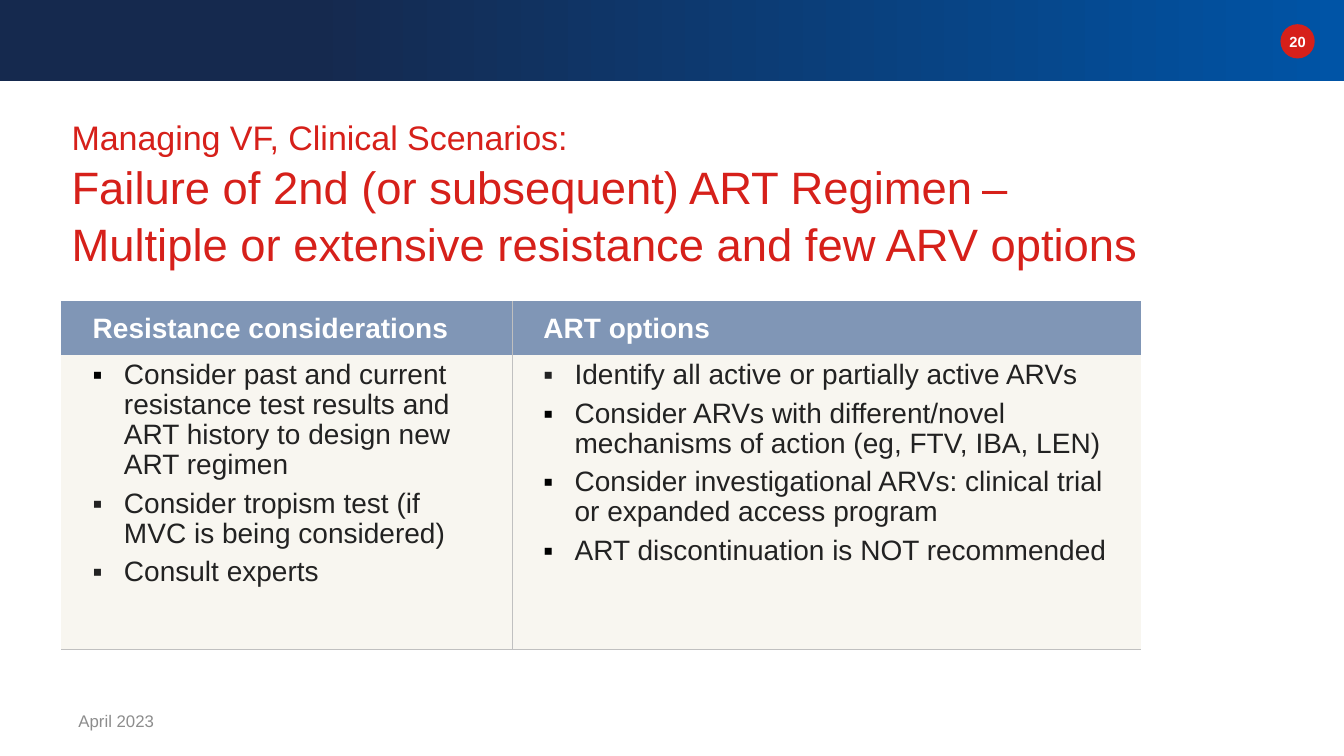
"""Build the slide on managing failure of a second or later ART regimen."""
from dataclasses import dataclass

import lxml.etree
import pptx
import pptx.dml.color
import pptx.enum.shapes
import pptx.enum.text
import pptx.oxml.ns
import pptx.util

Inches = pptx.util.Inches
Pt = pptx.util.Pt
qn = pptx.oxml.ns.qn

FONT = "Arial"
COLORS = {
    "navy": "15294E", "blue": "0054A6", "red": "D6201A", "white": "FFFFFF",
    "header": "8096B6", "body": "F8F6F0", "text": "222222", "black": "000000",
    "header_line": "BFBFBF", "body_line": "C0C0C0", "gray": "8D8D8D",
}
NO_TABLE_STYLE = "{2D5ABB26-0587-4C30-8999-92F81FD0307C}"


@dataclass(frozen=True)
class Bullet:
    """One list entry and the colour of its mark."""
    text: str
    mark: str = "text"


@dataclass(frozen=True)
class Column:
    """One table column with its heading and list."""
    heading: str
    width: float
    inner_side: str
    bullets: tuple[Bullet, ...]


@dataclass(frozen=True)
class TitleRun:
    """A stretch of the title at one size."""
    text: str
    size: float
    breaks: bool = False


@dataclass(frozen=True)
class Label:
    """A single line of text in its own box."""
    text: str
    box: tuple[float, float, float, float]
    size: float
    color: str
    bold: bool = False
    centered: bool = False


TITLE = (
    TitleRun("Managing VF, Clinical Scenarios:", 24.3, True),
    TitleRun("Failure of 2nd (or subsequent) ART Regimen", 32.4),
    TitleRun(" ", 24.3),
    TitleRun("–", 32.4, True),
    TitleRun("Multiple or extensive resistance and few ARV options", 32.4),
)
COLUMNS = (
    Column("Resistance considerations", 4.47, "R", (
        Bullet("Consider past and current resistance test results and "
               "ART history to design new ART regimen", "black"),
        Bullet("Consider tropism test (if MVC is being considered)"),
        Bullet("Consult experts"),
    )),
    Column("ART options", 6.24, "L", (
        Bullet("Identify all active or partially active ARVs"),
        Bullet("Consider ARVs with different/novel mechanisms of action "
               "(eg, FTV, IBA, LEN)", "black"),
        Bullet("Consider investigational ARVs: clinical trial or expanded "
               "access program", "black"),
        Bullet("ART discontinuation is NOT recommended", "black"),
    )),
)
ROW_HEIGHTS = (0.53, 2.92)
LABELS = (
    Label("20", (12.65, 0.27, 0.44, 0.28), 10.5, "white", True, True),
    Label("April 2023", (0.68, 6.95, 3, 0.4), 12, "gray"),
)


def rgb(name: str) -> pptx.dml.color.RGBColor:
    """Look up a named colour."""
    return pptx.dml.color.RGBColor.from_string(COLORS[name])


def set_font(paragraph, size: float, color: str, bold: bool = False) -> None:
    """Format all the text of a paragraph."""
    font = paragraph.font
    font.name, font.size, font.bold = FONT, Pt(size), bold
    font.color.rgb = rgb(color)


def add_plain_shape(slide, kind, left: float, top: float, width: float, height: float):
    """Add a shape without outline or shadow."""
    shape = slide.shapes.add_shape(
        kind, Inches(left), Inches(top), Inches(width), Inches(height))
    shape.shadow.inherit = False
    shape.line.fill.background()
    return shape


def add_banner(slide) -> None:
    """Draw the gradient banner and the page number disc."""
    kinds = pptx.enum.shapes.MSO_SHAPE
    banner = add_plain_shape(slide, kinds.RECTANGLE, 0, 0, 13.33, 0.8)
    banner.fill.gradient()
    banner.fill.gradient_angle = 0
    stops = ((0.23, "navy"), (1, "blue"))
    for stop, (position, color) in zip(banner.fill.gradient_stops, stops):
        stop.position = position
        stop.color.rgb = rgb(color)
    disc = add_plain_shape(slide, kinds.OVAL, 12.7, 0.24, 0.34, 0.34)
    disc.fill.solid()
    disc.fill.fore_color.rgb = rgb("red")


def add_label(slide, label: Label) -> None:
    """Add one line of text."""
    shape = slide.shapes.add_textbox(*map(Inches, label.box))
    frame = shape.text_frame
    frame.word_wrap = True
    frame.vertical_anchor = pptx.enum.text.MSO_ANCHOR.MIDDLE
    paragraph = frame.paragraphs[0]
    paragraph.text = label.text
    if label.centered:
        paragraph.alignment = pptx.enum.text.PP_ALIGN.CENTER
    set_font(paragraph, label.size, label.color, label.bold)


def fill_title(title) -> None:
    """Place the title and write its lines."""
    title.left, title.top = Inches(0.61), Inches(1.08)
    title.width, title.height = Inches(11.5), Inches(1.66)
    frame = title.text_frame
    frame.word_wrap = True
    frame.auto_size = pptx.enum.text.MSO_AUTO_SIZE.NONE
    frame.vertical_anchor = pptx.enum.text.MSO_ANCHOR.TOP
    frame.margin_top = Inches(0.06)
    paragraph = frame.paragraphs[0]
    paragraph.alignment = pptx.enum.text.PP_ALIGN.LEFT
    paragraph.line_spacing = 1.04
    set_font(paragraph, 32.4, "red")
    for part in TITLE:
        run = paragraph.add_run()
        run.text = part.text
        run.font.size = Pt(part.size)
        if part.breaks:
            paragraph.add_line_break()
            lxml.etree.SubElement(
                paragraph._p[-1], qn("a:rPr"), sz=str(round(part.size * 100)))


def format_cell(cell, fill: str, line: str, sides: str) -> None:
    """Set the margins, borders and fill of a cell."""
    cell.margin_left = cell.margin_right = Inches(0.31)
    cell.margin_top = cell.margin_bottom = Inches(0.06)
    properties = cell._tc.get_or_add_tcPr()
    for side in sides:
        border = lxml.etree.SubElement(properties, qn(f"a:ln{side}"), w=str(Pt(1)))
        solid = lxml.etree.SubElement(border, qn("a:solidFill"))
        lxml.etree.SubElement(solid, qn("a:srgbClr"), val=COLORS[line])
    cell.fill.solid()
    cell.fill.fore_color.rgb = rgb(fill)


def write_bullet(paragraph, bullet: Bullet) -> None:
    """Write one list entry with its square mark."""
    paragraph.text = bullet.text
    properties = paragraph._p.get_or_add_pPr()
    properties.set("marL", str(Inches(0.31)))
    properties.set("indent", str(-Inches(0.31)))
    color = lxml.etree.SubElement(properties, qn("a:buClr"))
    lxml.etree.SubElement(color, qn("a:srgbClr"), val=COLORS[bullet.mark])
    lxml.etree.SubElement(properties, qn("a:buFont"), typeface=FONT)
    lxml.etree.SubElement(properties, qn("a:buChar"), char="▪")
    paragraph.line_spacing = 0.96
    paragraph.space_after = Pt(6)
    set_font(paragraph, 20, "text")


def add_options_table(slide) -> None:
    """Add the table of considerations and options."""
    width = sum(column.width for column in COLUMNS)
    table = slide.shapes.add_table(
        len(ROW_HEIGHTS), len(COLUMNS), Inches(0.61), Inches(2.99),
        Inches(width), Inches(sum(ROW_HEIGHTS))).table
    table.horz_banding = False
    table._tbl.tblPr.find(qn("a:tableStyleId")).text = NO_TABLE_STYLE
    for row, height in zip(table.rows, ROW_HEIGHTS):
        row.height = Inches(height)
    for index, column in enumerate(COLUMNS):
        table.columns[index].width = Inches(column.width)
        heading, body = table.cell(0, index), table.cell(1, index)
        format_cell(heading, "header", "header_line", column.inner_side)
        heading.vertical_anchor = pptx.enum.text.MSO_ANCHOR.MIDDLE
        paragraph = heading.text_frame.paragraphs[0]
        paragraph.text = column.heading
        paragraph.line_spacing = 1.02
        set_font(paragraph, 20, "white", True)
        format_cell(body, "body", "body_line", column.inner_side + "B")
        frame = body.text_frame
        for number, bullet in enumerate(column.bullets):
            write_bullet(frame.add_paragraph() if number else frame.paragraphs[0], bullet)


def main() -> None:
    """Build and save the presentation."""
    presentation = pptx.Presentation()
    presentation.slide_width, presentation.slide_height = Inches(13.33), Inches(7.5)
    slide = presentation.slides.add_slide(presentation.slide_layouts[5])
    add_banner(slide)
    fill_title(slide.shapes.title)
    add_options_table(slide)
    for label in LABELS:
        add_label(slide, label)
    presentation.save("out.pptx")


if __name__ == "__main__":
    main()
